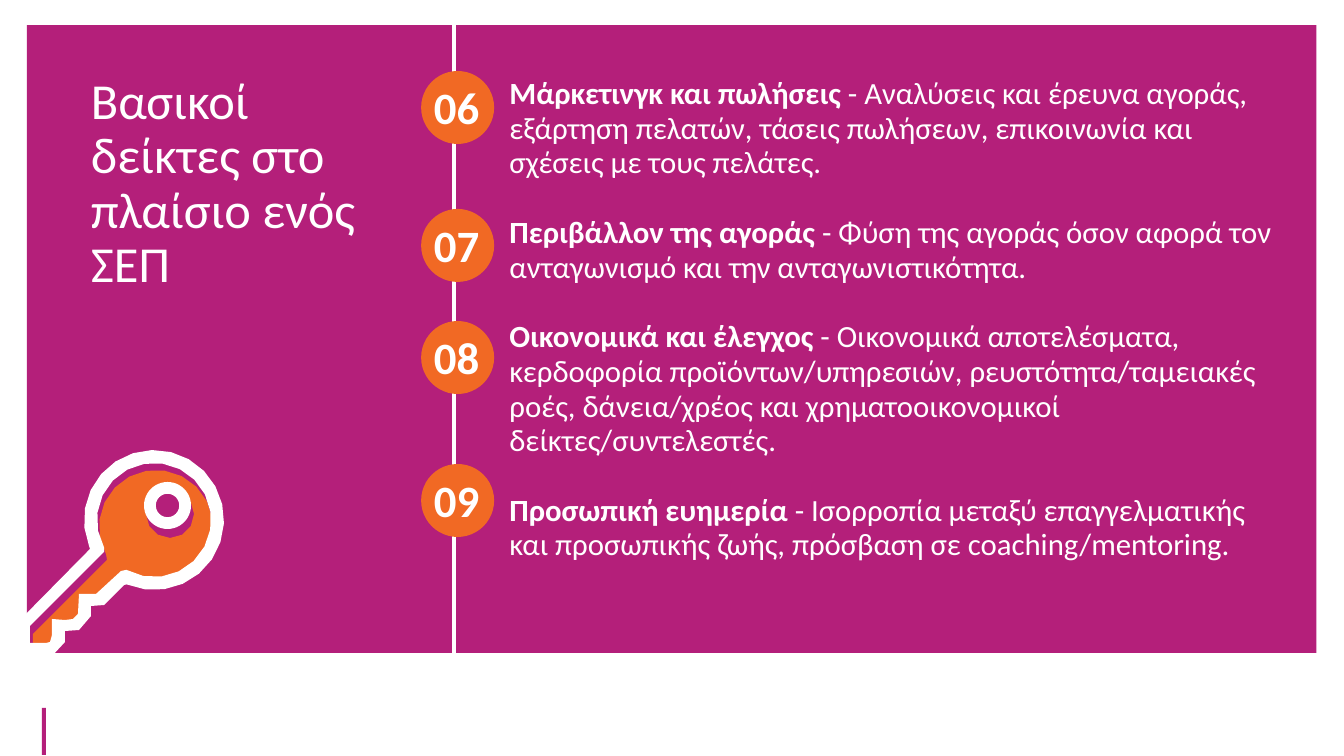
from math import cos, radians, sin

from lxml.etree import SubElement
from pptx import Presentation
from pptx.dml.color import RGBColor
from pptx.enum.shapes import MSO_CONNECTOR, MSO_SHAPE
from pptx.enum.text import PP_ALIGN
from pptx.oxml.ns import qn
from pptx.util import Inches, Pt

PX = 914400 / 100.8
FONT = "Calibri"
MAGENTA = RGBColor(0xB4, 0x1F, 0x7A)
ORANGE = RGBColor(0xF1, 0x69, 0x24)
WHITE = RGBColor(0xFF, 0xFF, 0xFF)

TITLE = "Βασικοί δείκτες στο πλαίσιο ενός ΣΕΠ"
INDICATORS = [
    ("Μάρκετινγκ και πωλήσεις ",
     "- Αναλύσεις και έρευνα αγοράς, εξάρτηση πελατών, τάσεις πωλήσεων, "
     "επικοινωνία και σχέσεις με τους πελάτες."),
    ("Περιβάλλον της αγοράς ",
     "- Φύση της αγοράς όσον αφορά τον ανταγωνισμό και την ανταγωνιστικότητα."),
    ("Οικονομικά και έλεγχος ",
     "- Οικονομικά αποτελέσματα, κερδοφορία προϊόντων/υπηρεσιών, "
     "ρευστότητα/ταμειακές ροές, δάνεια/χρέος και χρηματοοικονομικοί "
     "δείκτες/συντελεστές."),
    ("Προσωπική ευημερία ",
     "- Ισορροπία μεταξύ επαγγελματικής και προσωπικής ζωής, πρόσβαση σε "
     "coaching/mentoring."),
]
BADGE_TOPS = [71, 209, 321, 464]
FIRST_NUMBER = 6


def emu(*lengths):
    return [round(length * PX) for length in lengths]


def arc(x, y, radius, start, end, steps):
    """Points along a circle, with angles in degrees clockwise from the right."""
    angles = [radians(start + (end - start) * i / steps) for i in range(steps + 1)]
    return [(x + radius * cos(a), y + radius * sin(a)) for a in angles]


class SlidePainter:
    def __init__(self, slide):
        self.shapes = slide.shapes

    def paint(self, shape, color):
        shape.shadow.inherit = False
        shape.fill.solid()
        shape.fill.fore_color.rgb = color
        shape.line.fill.background()
        return shape

    def preset(self, kind, left, top, width, height, color):
        shape = self.shapes.add_shape(kind, *emu(left, top, width, height))
        return self.paint(shape, color)

    def outline(self, color, *contours):
        """Fill closed contours as one shape; inner contours become holes."""
        first, *others = [[emu(*point) for point in contour] for contour in contours]
        builder = self.shapes.build_freeform(*first[0], scale=1.0)
        builder.add_line_segments(first[1:], close=True)
        for contour in others:
            builder.move_to(*contour[0])
            builder.add_line_segments(contour[1:], close=True)
        self.paint(builder.convert_to_shape(), color)

    def line(self, x1, y1, x2, y2, width):
        connector = self.shapes.add_connector(
            MSO_CONNECTOR.STRAIGHT, *emu(x1, y1, x2, y2))
        connector.line.color.rgb = WHITE
        connector.line.width = Pt(width)
        SubElement(connector._element.spPr, qn("a:effectLst"))

    def text_frame(self, left, top, width, height):
        box = self.shapes.add_textbox(*emu(left, top, width, height))
        box.text_frame.word_wrap = True
        return box.text_frame

    def run(self, paragraph, text, size, bold=False):
        run = paragraph.add_run()
        run.text = text
        run.font.name = FONT
        run.font.size = Pt(size)
        run.font.bold = bold
        run.font.color.rgb = WHITE

    def title(self, text, left, top, width, height):
        paragraph = self.text_frame(left, top, width, height).paragraphs[0]
        paragraph.line_spacing = 0.9
        self.run(paragraph, text, 36)

    def indicators(self, entries, left, top, width, height):
        frame = self.text_frame(left, top, width, height)
        for index, (heading, description) in enumerate(entries):
            paragraph = frame.add_paragraph() if index else frame.paragraphs[0]
            paragraph.line_spacing = Pt(24.8)
            if index:
                paragraph.space_before = Pt(24.8)
            paragraph._p.get_or_add_pPr().set("marL", str(Inches(0.45)))
            self.run(paragraph, heading, 22, bold=True)
            self.run(paragraph, description, 22)

    def badge(self, number, left, top, size):
        self.preset(MSO_SHAPE.OVAL, left, top, size, size, ORANGE)
        frame = self.text_frame(left - 2, top + 4, size + 2, size - 8)
        paragraph = frame.paragraphs[0]
        paragraph.alignment = PP_ALIGN.CENTER
        self.run(paragraph, f"{number:02d}", 32, bold=True)

    def key(self):
        body = [(82, 602), (82, 619), (76, 627), (55, 627), (55, 643),
                (48, 651), (33, 651), (33, 634), (107, 560),
                *arc(156, 527, 57, 151, 479, 18),
                (124, 579), (102, 601)]
        body_hole = arc(170, 514, 24, 0, 330, 11)
        rim_outside = [(19, 621), (90, 549), *arc(154, 520, 70, 158, 473, 20),
                       (124, 585), (104, 605), (91, 606), (91, 616),
                       (79, 630), (65, 631), (65, 642), (53, 655), (19, 655)]
        rim_inside = [(79, 594), (96, 594), (121, 571),
                      *arc(154, 520, 57, 119, -209, 18),
                      (104, 552), (30, 626), (30, 643), (46, 643), (50, 642),
                      (52, 635), (52, 619), (65, 620), (73, 619), (78, 614)]
        self.outline(ORANGE, body, body_hole)
        self.outline(WHITE, rim_outside, rim_inside)
        self.preset(MSO_SHAPE.DONUT, 144, 482, 47, 47, WHITE)


def main():
    presentation = Presentation()
    presentation.slide_width = Inches(13.33)
    presentation.slide_height = Inches(7.5)
    painter = SlidePainter(
        presentation.slides.add_slide(presentation.slide_layouts[6]))

    painter.preset(MSO_SHAPE.RECTANGLE, 27, 25, 1289, 628, MAGENTA)
    painter.preset(MSO_SHAPE.RECTANGLE, 42, 708, 4, 47, MAGENTA)
    painter.title(TITLE, 81, 71, 314, 307)
    painter.indicators(INDICATORS, 454, 71, 835, 685)
    painter.line(454, 22, 454, 654, 3)
    for number, top in enumerate(BADGE_TOPS, FIRST_NUMBER):
        painter.badge(number, 421, top, 73)
    painter.key()

    presentation.save("out.pptx")


if __name__ == "__main__":
    main()
